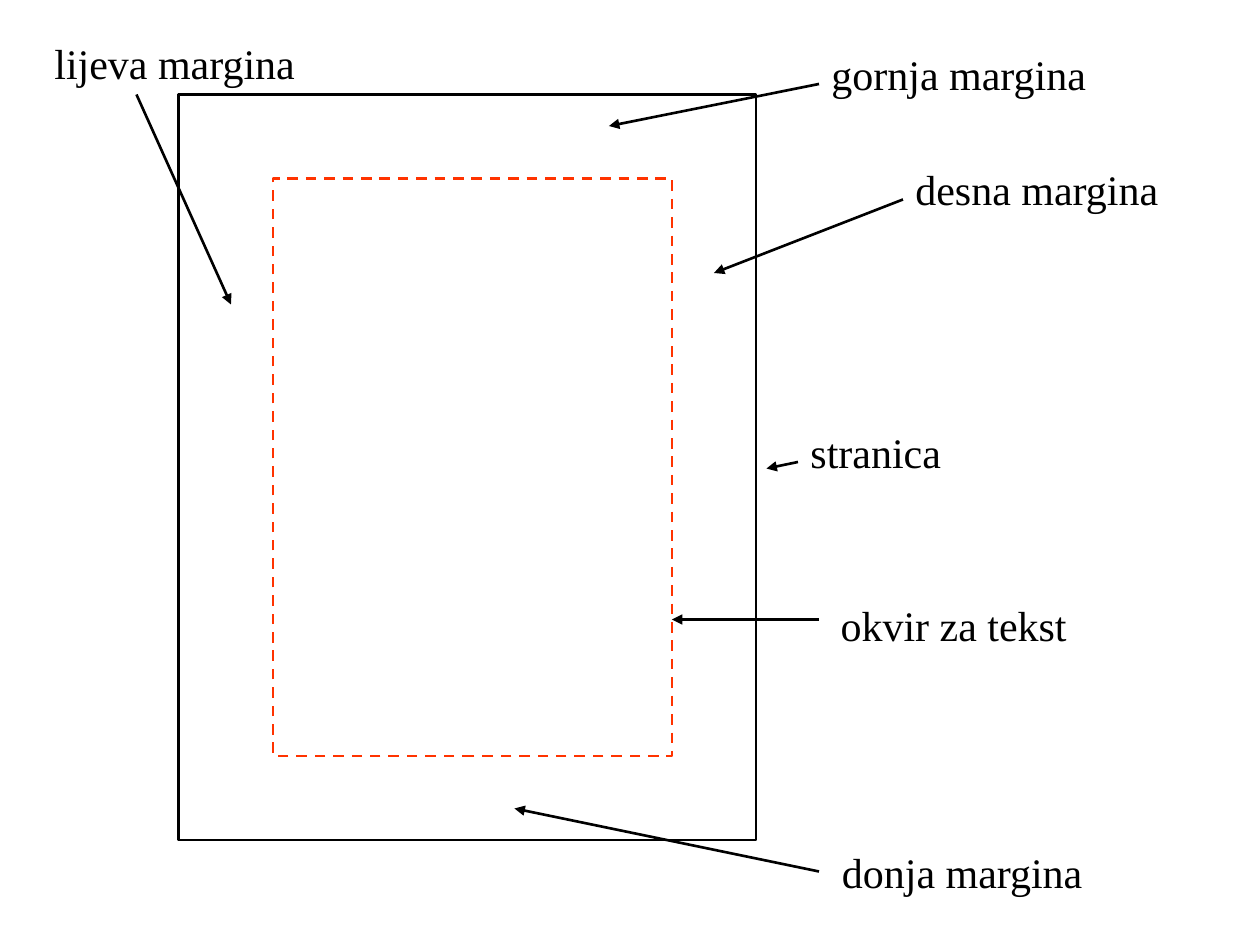
from lxml.etree import SubElement
from pptx import Presentation
from pptx.dml.color import RGBColor
from pptx.enum.dml import MSO_LINE_DASH_STYLE as Dash
from pptx.enum.shapes import MSO_CONNECTOR as Connector, MSO_SHAPE as Shape
from pptx.enum.text import MSO_AUTO_SIZE as AutoSize
from pptx.oxml.ns import qn
from pptx.util import Pt

PX = 9525
SLIDE_SIZE = (960, 720)
LABEL_HEIGHT = 49
COLOURS = {"ink": "000000", "paper": "FFFFFF", "frame": "FF3300"}
LABEL_FONT = {"name": "Times New Roman", "size": Pt(24)}
LABEL_FRAME = {"word_wrap": False, "auto_size": AutoSize.SHAPE_TO_FIT_TEXT}

RECTANGLES = [
    {"box": (136, 72, 440, 568), "fill": "paper", "line": "ink", "dash": None},
    {"box": (208, 136, 304, 440), "fill": None, "line": "frame", "dash": Dash.DASH},
]

# text, (left, top, width), arrow start, arrow tip
CALLOUTS = [
    ("lijeva margina", (32, 24, 204), (104, 72), (176, 232)),
    ("gornja margina", (624, 32, 215), (624, 64), (464, 96)),
    ("desna margina", (688, 120, 206), (688, 152), (544, 208)),
    ("stranica", (608, 320, 120), (608, 352), (584, 357)),
    ("okvir za tekst", (631, 452, 193), (624, 472), (512, 472)),
    ("donja margina", (632, 640, 204), (624, 664), (392, 616)),
]


def emu(*lengths):
    return [length * PX for length in lengths]


def colour(key):
    return RGBColor.from_string(COLOURS[key])


def apply(target, values):
    for attribute, value in values.items():
        setattr(target, attribute, value)


def style_line(line, key, dash=None):
    line.color.rgb = colour(key)
    apply(line, {"width": Pt(1.5), "dash_style": dash})


def add_rectangle(slide, box, fill, line, dash):
    rectangle = slide.shapes.add_shape(Shape.RECTANGLE, *emu(*box))
    rectangle.shadow.inherit = False
    if fill:
        rectangle.fill.solid()
        rectangle.fill.fore_color.rgb = colour(fill)
    else:
        rectangle.fill.background()
    style_line(rectangle.line, line, dash)


def add_arrow(slide, start, tip):
    arrow = slide.shapes.add_connector(Connector.STRAIGHT, *emu(*start, *tip))
    style_line(arrow.line, "ink")
    SubElement(arrow.line._get_or_add_ln(), qn("a:tailEnd"), type="triangle")
    SubElement(arrow._element.spPr, qn("a:effectLst"))


def add_label(slide, text, place):
    label = slide.shapes.add_textbox(*emu(*place, LABEL_HEIGHT))
    apply(label.text_frame, LABEL_FRAME)
    run = label.text_frame.paragraphs[0].add_run()
    run.text = text
    apply(run.font, LABEL_FONT)
    run.font.color.rgb = colour("ink")


def main():
    deck = Presentation()
    deck.slide_width, deck.slide_height = emu(*SLIDE_SIZE)
    slide = deck.slides.add_slide(deck.slide_layouts[6])
    for rectangle in RECTANGLES:
        add_rectangle(slide, **rectangle)
    for text, place, start, tip in CALLOUTS:
        add_arrow(slide, start, tip)
        add_label(slide, text, place)
    deck.save("out.pptx")


if __name__ == "__main__":
    main()
